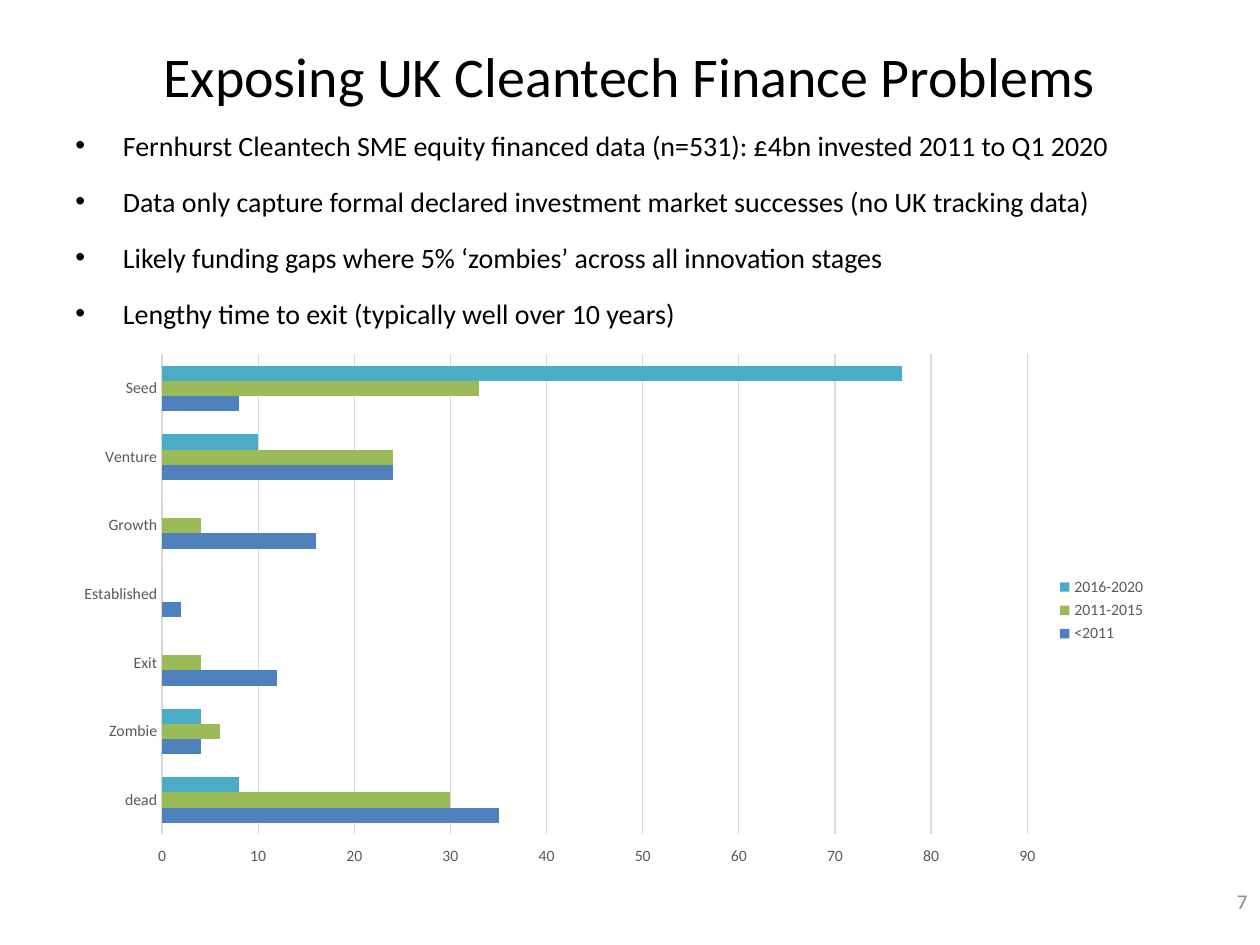
from dataclasses import dataclass

from lxml.etree import SubElement
from pptx import Presentation
from pptx.chart.data import CategoryChartData as Data
from pptx.dml.color import RGBColor
from pptx.enum.chart import XL_CHART_TYPE as Kind
from pptx.enum.chart import XL_LEGEND_POSITION as Side
from pptx.enum.chart import XL_TICK_MARK as Tick
from pptx.enum.text import MSO_ANCHOR as Anchor
from pptx.enum.text import PP_ALIGN as Align
from pptx.oxml.ns import qn
from pptx.util import Cm, Pt

FONT = "Calibri"
GREY = "595959"
RULE = "D9D9D9"


@dataclass
class Box:
    x: float
    y: float
    w: float
    h: float

    def place(self) -> tuple:
        return Cm(self.x), Cm(self.y), Cm(self.w), Cm(self.h)


@dataclass
class Text:
    box: Box
    lines: list[str]
    size: int
    hue: str = "000000"
    align: Align = Align.LEFT
    anchor: Anchor = Anchor.MIDDLE
    listed: bool = False


@dataclass
class Series:
    name: str
    vals: list[int]
    hue: str


TEXTS = [
    Text(Box(1.27, 0.34, 22.86, 2.34), ["Exposing UK Cleantech Finance Problems"],
         32, align=Align.CENTER),
    Text(Box(1.27, 2.13, 22.86, 14.88), [
        "Fernhurst Cleantech SME equity financed data (n=531): £4bn invested 2011 to Q1 2020",
        "Data only capture formal declared investment market successes (no UK tracking data)",
        "Likely funding gaps where 5% ‘zombies’ across all innovation stages",
        "Lengthy time to exit (typically well over 10 years)",
    ], 16, anchor=Anchor.TOP, listed=True),
    Text(Box(19.48, 17.65, 5.92, 1.02), ["7"], 12, "8C8C8C", Align.RIGHT),
]
STAGES = ["dead", "Zombie", "Exit", "Established", "Growth", "Venture", "Seed"]
SERIES = [
    Series("<2011", [35, 4, 12, 2, 16, 24, 8], "4F81BD"),
    Series("2011-2015", [30, 6, 4, 0, 4, 24, 33], "9BBB59"),
    Series("2016-2020", [8, 4, 0, 0, 0, 10, 77], "4BACC6"),
]
CHART = Box(1.28, 6.93, 22.08, 10.75)
PLOT = Box(0.09, 0.02, 0.79, 0.9)


def tint(hue: str) -> RGBColor:
    return RGBColor.from_string(hue)


def style(font, size: int, hue: str) -> None:
    font.name = FONT
    font.size = Pt(size)
    font.color.rgb = tint(hue)


def rule(line) -> None:
    line.color.rgb = tint(RULE)
    line.width = Pt(0.75)


def bullet(para, size: int) -> None:
    para.line_spacing = 1.5
    para.space_before = Pt(size * 0.2)
    props = para._p.get_or_add_pPr()
    indent = Cm(0.96)
    props.set("marL", str(indent))
    props.set("indent", str(-indent))
    SubElement(props, qn("a:buFont"), typeface="Arial")
    SubElement(props, qn("a:buChar"), char="•")


def write(slide, item: Text) -> None:
    frame = slide.shapes.add_textbox(*item.box.place()).text_frame
    frame.word_wrap = True
    frame.vertical_anchor = item.anchor
    frame.text = "\n".join(item.lines)
    for para in frame.paragraphs:
        para.alignment = item.align
        if item.listed:
            bullet(para, item.size)
        for run in para.runs:
            style(run.font, item.size, item.hue)


def fix_plot(chart, box: Box) -> None:
    area = chart._chartSpace.chart.plotArea
    layout = area.find(qn("c:layout"))
    if layout is None:
        layout = SubElement(area, qn("c:layout"))
        area.insert(0, layout)
    manual = SubElement(layout, qn("c:manualLayout"))
    parts = {"layoutTarget": "inner", "xMode": "edge", "yMode": "edge",
             "x": box.x, "y": box.y, "w": box.w, "h": box.h}
    for tag, val in parts.items():
        SubElement(manual, qn(f"c:{tag}"), val=str(val))


def plot(slide, box: Box, names: list[str], series: list[Series]) -> None:
    data = Data()
    data.categories = names
    for one in series:
        data.add_series(one.name, one.vals)
    chart = slide.shapes.add_chart(Kind.BAR_CLUSTERED, *box.place(), data).chart
    style(chart.font, 10, "000000")
    chart.has_title = False
    chart.has_legend = True
    chart.legend.position = Side.RIGHT
    chart.legend.include_in_layout = False
    style(chart.legend.font, 9, GREY)

    bars = chart.plots[0]
    bars.vary_by_categories = False
    bars.gap_width = 150
    for bar, one in zip(bars.series, series):
        bar.format.fill.solid()
        bar.format.fill.fore_color.rgb = tint(one.hue)

    cats, vals = chart.category_axis, chart.value_axis
    for axis in (cats, vals):
        style(axis.tick_labels.font, 9, GREY)
    cats.major_tick_mark = Tick.NONE
    rule(cats.format.line)
    vals.minimum_scale, vals.maximum_scale, vals.major_unit = 0, 90, 10
    vals.major_tick_mark = Tick.OUTSIDE
    vals.tick_labels.number_format = "0"
    vals.tick_labels.number_format_is_linked = False
    vals.format.line.fill.background()
    vals.has_major_gridlines = True
    rule(vals.major_gridlines.format.line)
    fix_plot(chart, PLOT)


def main() -> None:
    deck = Presentation()
    deck.slide_width, deck.slide_height = Cm(25.4), Cm(19.05)
    slide = deck.slides.add_slide(deck.slide_layouts[6])
    for item in TEXTS:
        write(slide, item)
    plot(slide, CHART, STAGES, SERIES)
    deck.save("out.pptx")


if __name__ == "__main__":
    main()
